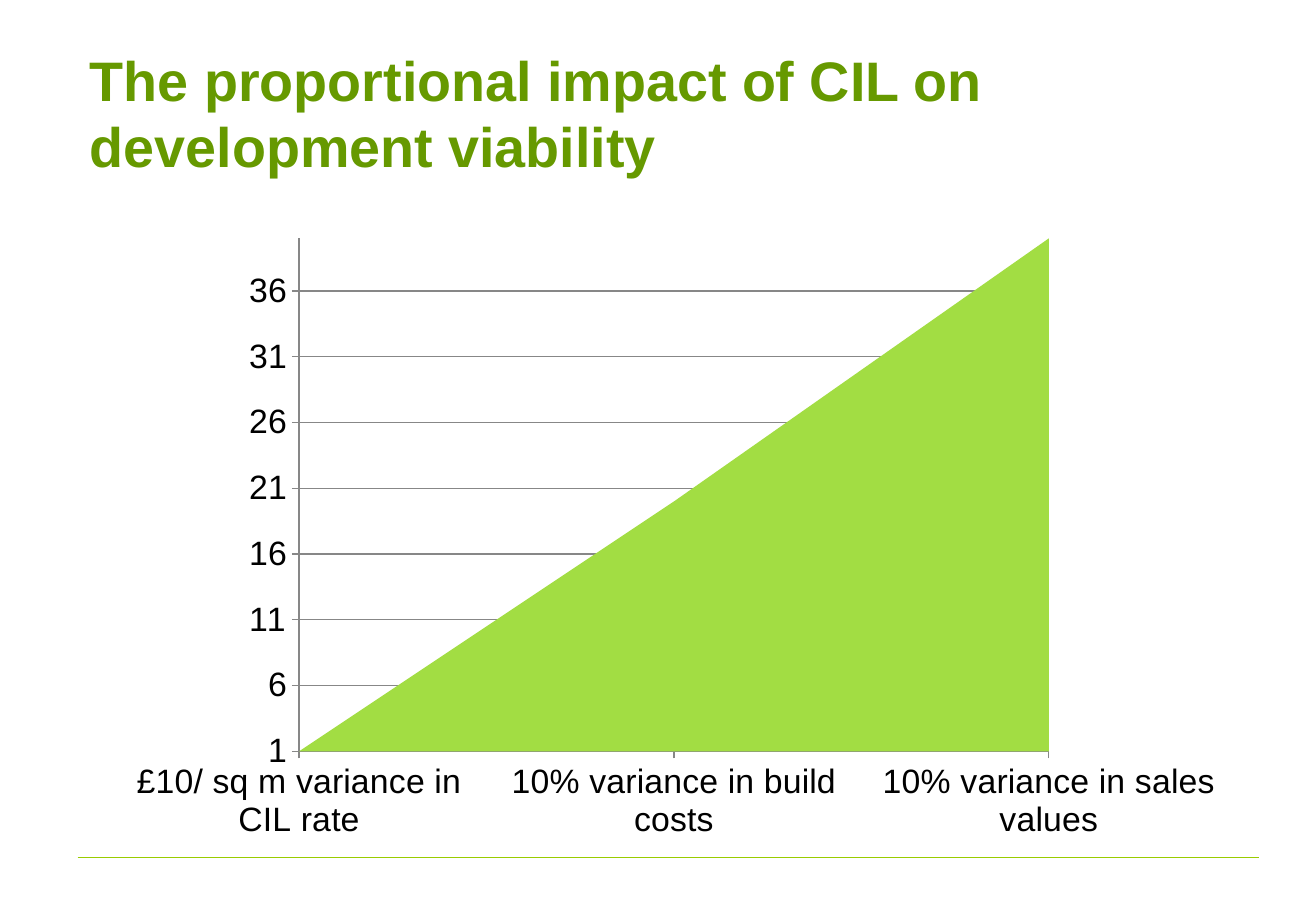
"""Builds a slide with an area chart on the impact of CIL on viability."""
from lxml.etree import SubElement
from pptx import Presentation
from pptx.chart.data import CategoryChartData
from pptx.dml.color import RGBColor
from pptx.enum.chart import XL_CHART_TYPE as ChartType, XL_TICK_MARK as TickMark
from pptx.enum.shapes import MSO_CONNECTOR as Connector
from pptx.enum.text import MSO_ANCHOR as Anchor, MSO_AUTO_SIZE as AutoSize, PP_ALIGN as Align
from pptx.oxml import parse_xml
from pptx.oxml.ns import nsdecls, qn
from pptx.util import Inches, Pt

FONT = "Arial"
TITLE_GREEN = RGBColor(0x66, 0x99, 0x00)
RULE_GREEN = RGBColor(0x99, 0xCC, 0x00)
AREA_GREEN = RGBColor(0xA2, 0xDD, 0x43)
AXIS_GREY = RGBColor(0x87, 0x87, 0x87)
BLACK = RGBColor(0, 0, 0)
TITLE_ONLY_LAYOUT = 5
PLOT_LAYOUT = {"x": 0.15, "y": 0.02, "w": 0.67, "h": 0.82}


def add_rule(slide):
    rule = slide.shapes.add_connector(
        Connector.STRAIGHT, Inches(0.64), Inches(7.06), Inches(10.36), Inches(7.06))
    rule.line.color.rgb = RULE_GREEN
    rule.line.width = Pt(0.75)
    SubElement(rule._element.spPr, qn("a:effectLst"))


def set_title(slide, text):
    title = slide.shapes.title
    title.left, title.top = Inches(0.64), Inches(0.3)
    title.width, title.height = Inches(9.75), Inches(1.25)
    frame = title.text_frame
    frame.text = text
    frame.word_wrap = True
    frame.auto_size = AutoSize.NONE
    frame.vertical_anchor = Anchor.MIDDLE
    paragraph = frame.paragraphs[0]
    paragraph.alignment = Align.LEFT
    font = paragraph.font
    font.name, font.size, font.bold = FONT, Pt(33), True
    font.color.rgb = TITLE_GREEN


def format_axis(axis):
    axis.major_tick_mark = TickMark.OUTSIDE
    axis.minor_tick_mark = TickMark.NONE
    axis.format.line.color.rgb = AXIS_GREY
    axis.format.line.width = Pt(0.75)
    font = axis.tick_labels.font
    font.name, font.size = FONT, Pt(20)
    font.color.rgb = BLACK


def place_plot(chart):
    plot_area = chart._chartSpace.chart.plotArea
    for layout in plot_area.findall(qn("c:layout")):
        plot_area.remove(layout)
    sizes = "".join(f'<c:{key} val="{value}"/>' for key, value in PLOT_LAYOUT.items())
    plot_area.insert(0, parse_xml(
        f'<c:layout {nsdecls("c")}><c:manualLayout><c:layoutTarget val="inner"/>'
        f'<c:xMode val="edge"/><c:yMode val="edge"/>{sizes}</c:manualLayout></c:layout>'))


def add_area_chart(slide, categories, values):
    data = CategoryChartData()
    data.categories = categories
    data.add_series("Series 1", values)
    chart = slide.shapes.add_chart(
        ChartType.AREA, Inches(1.08), Inches(1.86), Inches(9.21), Inches(5.15), data).chart
    chart.has_legend = False
    chart.has_title = False
    chart.font.name, chart.font.size = FONT, Pt(10)
    chart.font.color.rgb = BLACK
    plot = chart.plots[0]
    plot.vary_by_categories = False
    fill = plot.series[0].format.fill
    fill.solid()
    fill.fore_color.rgb = AREA_GREEN
    for axis in (chart.category_axis, chart.value_axis):
        format_axis(axis)
    value_axis = chart.value_axis
    value_axis.minimum_scale, value_axis.maximum_scale = 1, 40
    value_axis.major_unit = 5
    value_axis.has_major_gridlines = True
    gridline = value_axis.major_gridlines.format.line
    gridline.color.rgb = AXIS_GREY
    gridline.width = Pt(0.75)
    place_plot(chart)


def main():
    presentation = Presentation()
    presentation.slide_width, presentation.slide_height = Inches(10.83), Inches(7.5)
    slide = presentation.slides.add_slide(presentation.slide_layouts[TITLE_ONLY_LAYOUT])
    add_rule(slide)
    set_title(slide, "The proportional impact of CIL on development viability")
    add_area_chart(
        slide,
        ["£10/ sq m variance in CIL rate", "10% variance in build costs",
         "10% variance in sales values"],
        [1, 20, 40])
    presentation.save("out.pptx")


if __name__ == "__main__":
    main()
